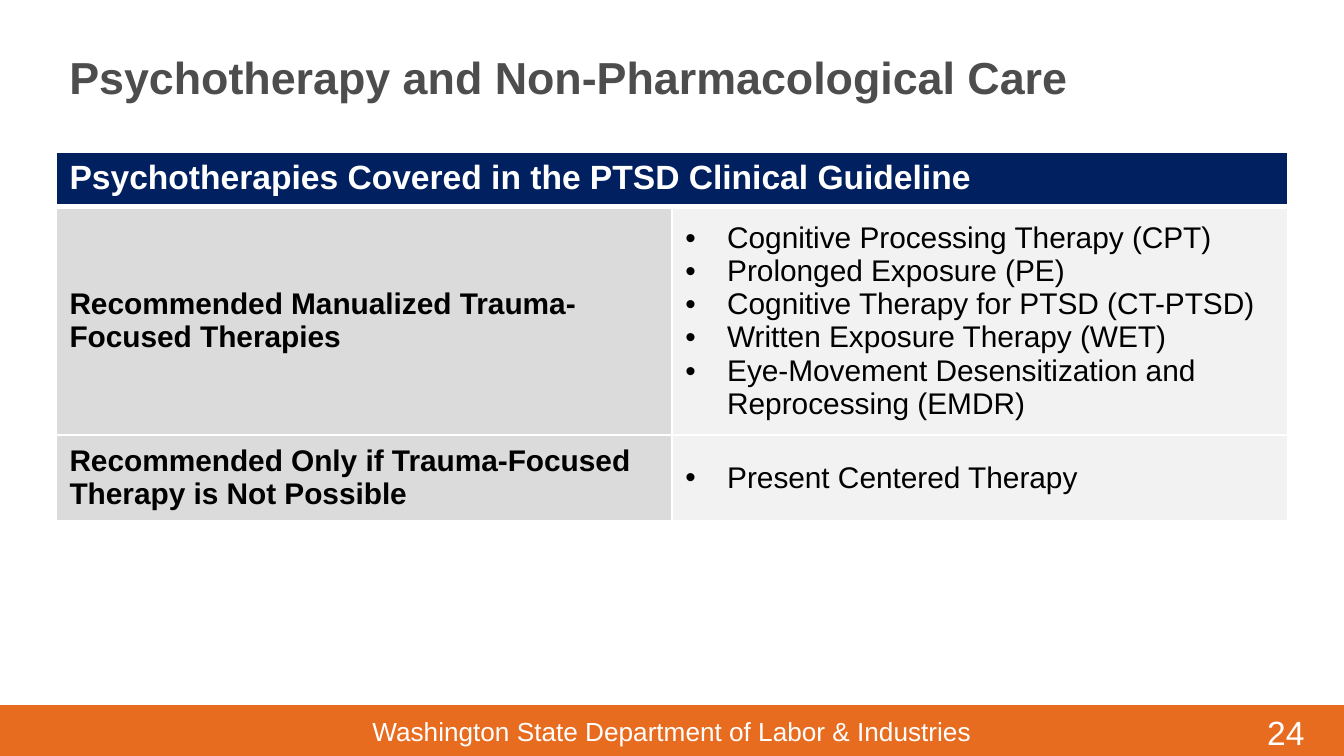
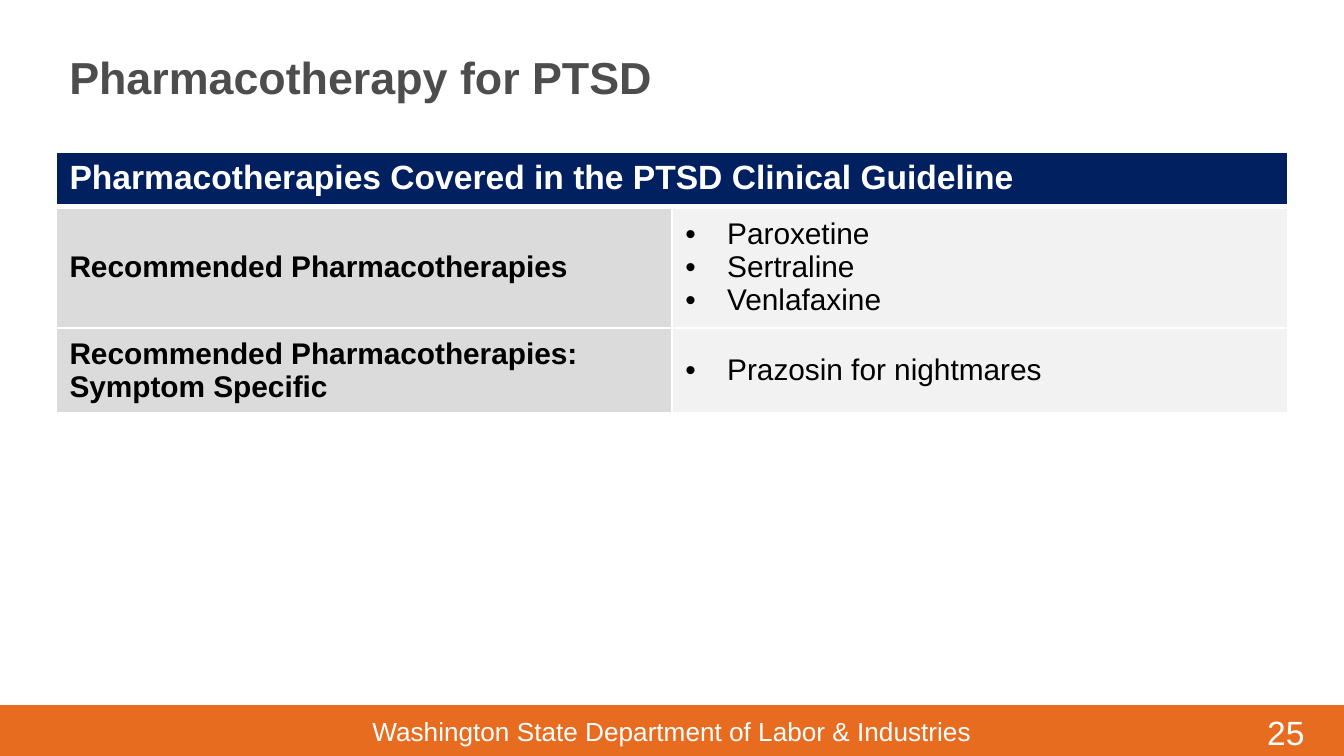
from lxml.etree import SubElement
from pptx import Presentation
from pptx.dml.color import RGBColor as RGB
from pptx.enum.shapes import MSO_SHAPE as SHAPE
from pptx.enum.text import MSO_ANCHOR as ANCHOR, PP_ALIGN as ALIGN
from pptx.oxml.ns import qn
from pptx.util import Cm, Pt

COLORS = {
    "band": "E86C1F", "title": "4D4D4D", "header": "002060",
    "label": "DBDBDB", "list": "F2F2F2", "white": "FFFFFF", "text": "000000",
}
FONT = "Arial"
FOOTER = "Washington State Department of Labor & Industries"
SLIDE_W, SLIDE_H = 25.4, 14.29
MARGIN = 1.06
CONTENT_W = SLIDE_W - 2 * MARGIN
BAND_TOP = 13.33
ROW_H = 1.04
INDENT = 0.79

SLIDES = [
    (24, "Psychotherapy and Non-Pharmacological Care",
     "Psychotherapies Covered in the PTSD Clinical Guideline",
     [("Recommended Manualized Trauma-Focused Therapies",
       ["Cognitive Processing Therapy (CPT)",
        "Prolonged Exposure (PE)",
        "Cognitive Therapy for PTSD (CT-PTSD)",
        "Written Exposure Therapy (WET)",
        "Eye-Movement Desensitization and Reprocessing (EMDR)"]),
      ("Recommended Only if Trauma-Focused Therapy is Not Possible",
       ["Present Centered Therapy"])]),
    (25, "Pharmacotherapy for PTSD",
     "Pharmacotherapies Covered in the PTSD Clinical Guideline",
     [("Recommended Pharmacotherapies",
       ["Paroxetine", "Sertraline", "Venlafaxine"]),
      ("Recommended Pharmacotherapies: Symptom Specific",
       ["Prazosin for nightmares"])]),
]


def color(name):
    return RGB.from_string(COLORS[name])


def format_text(tf, size, color_name, bold=False):
    for p in tf.paragraphs:
        for r in p.runs:
            r.font.name = FONT
            r.font.size = Pt(size)
            r.font.bold = bold
            r.font.color.rgb = color(color_name)


def add_text(s, text, left, top, width, height, size, color_name,
             bold=False, align=ALIGN.LEFT, anchor=ANCHOR.TOP):
    tf = s.shapes.add_textbox(Cm(left), Cm(top), Cm(width), Cm(height)).text_frame
    tf.word_wrap = True
    tf.vertical_anchor = anchor
    tf.text = text
    tf.paragraphs[0].alignment = align
    format_text(tf, size, color_name, bold)


def add_footer(s, number):
    band = s.shapes.add_shape(SHAPE.RECTANGLE, 0, Cm(BAND_TOP),
                              Cm(SLIDE_W), Cm(SLIDE_H - BAND_TOP))
    band.shadow.inherit = False
    band.fill.solid()
    band.fill.fore_color.rgb = color("band")
    band.line.fill.background()
    add_text(s, str(number), 23.7, BAND_TOP, 1.47, 1.12, 18, "white")
    add_text(s, FOOTER, 0, 13.39, SLIDE_W, 0.64, 14, "white", align=ALIGN.CENTER)


def set_borders(cell, top=1, bottom=1):
    tcPr = cell._tc.get_or_add_tcPr()
    for side, width in (("L", 1), ("R", 1), ("T", top), ("B", bottom)):
        ln = SubElement(tcPr, qn(f"a:ln{side}"), w=str(Pt(width)))
        fill = SubElement(ln, qn("a:solidFill"))
        SubElement(fill, qn("a:srgbClr"), val=COLORS["white"])


def add_bullet(p):
    pPr = p._p.get_or_add_pPr()
    pPr.set("marL", str(Cm(INDENT)))
    pPr.set("indent", str(-Cm(INDENT)))
    SubElement(pPr, qn("a:buFont"), typeface=FONT)
    SubElement(pPr, qn("a:buChar"), char="•")


def fill_cell(cell, text, fill, size=16, color_name="text", bold=False,
              anchor=ANCHOR.MIDDLE):
    cell.fill.solid()
    cell.fill.fore_color.rgb = color(fill)
    cell.vertical_anchor = anchor
    cell.text_frame.text = text
    format_text(cell.text_frame, size, color_name, bold)


def add_guideline_table(s, heading, groups):
    rows = len(groups) + 1
    table = s.shapes.add_table(rows, 2, Cm(MARGIN), Cm(2.87),
                               Cm(CONTENT_W), Cm(ROW_H * rows)).table
    table.first_row = table.horz_banding = False

    # Heading across both columns, with a thick rule below
    for cell in table.rows[0].cells:
        set_borders(cell, bottom=3)
    table.cell(0, 0).merge(table.cell(0, 1))
    fill_cell(table.cell(0, 0), heading, "header", 18, "white", True, ANCHOR.TOP)

    # Label on the left, bulleted therapies on the right
    for i, (label, therapies) in enumerate(groups, 1):
        label_cell, list_cell = table.cell(i, 0), table.cell(i, 1)
        for cell in (label_cell, list_cell):
            set_borders(cell, top=3 if i == 1 else 1)
        fill_cell(label_cell, label, "label", bold=True)
        fill_cell(list_cell, "\n".join(therapies), "list")
        for p in list_cell.text_frame.paragraphs:
            add_bullet(p)


def main():
    prs = Presentation()
    prs.slide_width, prs.slide_height = Cm(SLIDE_W), Cm(SLIDE_H)
    for number, title, heading, groups in SLIDES:
        s = prs.slides.add_slide(prs.slide_layouts[6])
        add_footer(s, number)
        add_text(s, title, MARGIN, 0.79, CONTENT_W, 1.32, 24, "title",
                 bold=True, anchor=ANCHOR.MIDDLE)
        add_guideline_table(s, heading, groups)
    prs.save("out.pptx")


if __name__ == "__main__":
    main()
